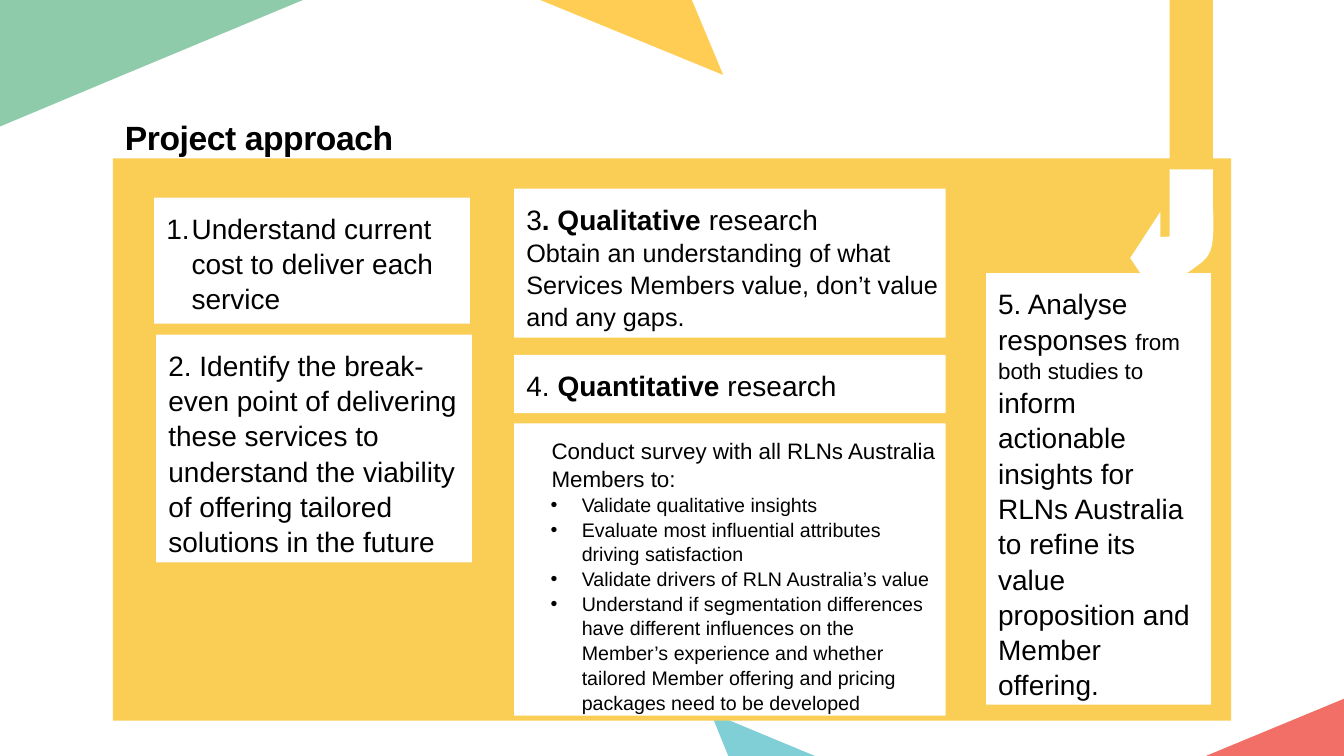
from dataclasses import dataclass
from typing import Optional

from lxml import etree
from pptx import Presentation
from pptx.dml.color import RGBColor
from pptx.enum import shapes, text
from pptx.oxml import ns
from pptx.util import Inches, Pt

YELLOW, WHITE, BLACK = "FACD54", "FFFFFF", "000000"
FONT = "Arial"
Point = tuple[float, float]


@dataclass
class Span:
    words: str
    size: float = 20
    bold: bool = False


@dataclass
class Para:
    spans: list[Span]
    margin: float = 0
    indent: float = 0
    bullet: Optional[str] = None
    level: int = 0


@dataclass
class Card:
    left: float
    top: float
    width: float
    height: float
    paras: list[Para]


@dataclass
class Corner:
    points: list[Point]
    edge: list[Point]
    color: str
    edge_width: float


def rgb(color: str) -> RGBColor:
    return RGBColor.from_string(color)


def draw_path(page, points: list[Point], closed: bool = True):
    emu = [(Inches(x), Inches(y)) for x, y in points]
    builder = page.shapes.build_freeform(*emu[0])
    builder.add_line_segments(emu[1:], close=closed)
    shape = builder.convert_to_shape()
    shape.shadow.inherit = False
    return shape


def fill_plain(shape, color: str) -> None:
    shape.shadow.inherit = False
    shape.fill.solid()
    shape.fill.fore_color.rgb = rgb(color)
    shape.line.fill.background()


def draw_corner(page, corner: Corner) -> None:
    fill_plain(draw_path(page, corner.points), corner.color)
    edge = draw_path(page, corner.edge, closed=False)
    edge.fill.background()
    edge.line.color.rgb = rgb(WHITE)
    edge.line.width = Pt(corner.edge_width)


def draw_box(page, left: float, top: float, width: float, height: float, color: str):
    box = page.shapes.add_shape(
        shapes.MSO_SHAPE.RECTANGLE, Inches(left), Inches(top), Inches(width), Inches(height))
    fill_plain(box, color)
    return box


def set_margins(frame, left: float, top: float, right: float, bottom: float) -> None:
    frame.word_wrap = True
    frame.vertical_anchor = text.MSO_ANCHOR.TOP
    frame.margin_left, frame.margin_top = Inches(left), Inches(top)
    frame.margin_right, frame.margin_bottom = Inches(right), Inches(bottom)


def format_run(run, span: Span) -> None:
    run.font.name = FONT
    run.font.size = Pt(span.size)
    run.font.bold = span.bold
    run.font.color.rgb = rgb(BLACK)


def set_bullet(paragraph, para: Para) -> None:
    props = paragraph._p.get_or_add_pPr()
    props.set("marL", str(Inches(para.margin)))
    props.set("indent", str(Inches(para.indent)))
    if para.bullet == "•":
        font = etree.SubElement(props, ns.qn("a:buFont"))
        font.set("typeface", FONT)
        etree.SubElement(props, ns.qn("a:buChar")).set("char", para.bullet)
    elif para.bullet:
        etree.SubElement(props, ns.qn("a:buAutoNum")).set("type", para.bullet)


def draw_card(page, card: Card) -> None:
    box = draw_box(page, card.left, card.top, card.width, card.height, WHITE)
    frame = box.text_frame
    set_margins(frame, 0.12, 0.12, 0.05, 0.12)
    for index, para in enumerate(card.paras):
        paragraph = frame.add_paragraph() if index else frame.paragraphs[0]
        paragraph.alignment = text.PP_ALIGN.LEFT
        paragraph.line_spacing = 1.05
        paragraph.level = para.level
        set_bullet(paragraph, para)
        for span in para.spans:
            run = paragraph.add_run()
            run.text = span.words
            format_run(run, span)


def draw_title(page, words: str) -> None:
    box = page.shapes.add_textbox(Inches(1.23), Inches(1.14), Inches(11.94), Inches(0.41))
    set_margins(box.text_frame, 0.01, 0.02, 0, 0)
    box.text_frame.text = words
    run = box.text_frame.paragraphs[0].runs[0]
    format_run(run, Span(words, 24, True))
    run._r.get_or_add_rPr().set("spc", "-30")


def bezier(points: list[Point], steps: int = 8) -> list[Point]:
    curve = []
    for step in range(1, steps + 1):
        t = step / steps
        weights = ((1 - t) ** 3, 3 * t * (1 - t) ** 2, 3 * t * t * (1 - t), t ** 3)
        curve.append((sum(w * x for w, (x, _) in zip(weights, points)),
                      sum(w * y for w, (_, y) in zip(weights, points))))
    return curve


def draw_arrow(page) -> None:
    knots = [
        (11.51, 2.77), (11.62, 2.77), (11.74, 2.74), (11.83, 2.67),
        (11.92, 2.6), (12.02, 2.56), (12.03, 2.36),
        (12.05, 2.16), (12.02, 1.78), (11.95, 1.62),
        (11.88, 1.47), (11.75, 1.35), (11.63, 1.35),
        (11.72, 1.37), (11.81, 1.45), (11.86, 1.57),
        (11.91, 1.69), (11.93, 1.83), (11.9, 1.97),
        (11.88, 2.1), (11.82, 2.21), (11.75, 2.28),
        (11.67, 2.35), (11.59, 2.35), (11.51, 2.35)]
    outline = [knots[0]]
    for start in range(0, len(knots) - 1, 3):
        outline += bezier(knots[start:start + 4])
    outline += [(11.51, 2.1), (11.21, 2.56), (11.51, 3.01)]
    fill_plain(draw_path(page, outline), WHITE)
    draw_box(page, 11.6, 1.67, 0.43, 0.69, WHITE)
    draw_box(page, 11.6, -0.01, 0.43, 1.69, YELLOW)


CORNERS = [
    Corner([(3.28, -0.04), (0, -0.04), (0, 1.33)],
           [(0, 1.33), (1.05, 0.89), (3.28, -0.04)], "8DCBAA", 9.69),
    Corner([(6.92, -0.04), (5.08, -0.04), (7.3, 0.87)],
           [(5.08, -0.04), (7.3, 0.87), (6.92, -0.04)], "FFCD54", 9.69),
    Corner([(6.9, 6.92), (7.16, 7.56), (8.44, 7.56)],
           [(8.44, 7.56), (6.9, 6.92), (7.16, 7.56)], "81CFD6", 11.54),
    Corner([(13.34, 6.84), (11.65, 7.54), (13.34, 7.54)],
           [(13.34, 6.84), (11.65, 7.54)], "F26F67", 11.54),
]
SURVEY_GOALS = [
    "Validate qualitative insights",
    "Evaluate most influential attributes driving satisfaction",
    "Validate drivers of RLN Australia’s value",
    "Understand if segmentation differences have different influences on the Member’s experience "
    "and whether tailored Member offering and pricing packages need to be developed",
]
CARDS = [
    Card(1.53, 1.96, 3.13, 1.25, [Para(
        [Span("Understand current cost to deliver each service")], 0.25, -0.25, "arabicPeriod")]),
    Card(1.55, 3.32, 3.13, 2.26, [Para([Span(
        "2. Identify the break-even point of delivering these services to understand "
        "the viability of offering tailored solutions in the future")])]),
    Card(5.1, 1.87, 4.28, 1.48, [
        Para([Span("3"), Span(". Qualitative ", bold=True), Span("research")]),
        Para([Span("Obtain an understanding of what Services Members value, "
                   "don’t value and any gaps.", 18)])]),
    Card(5.1, 3.52, 4.28, 0.58, [
        Para([Span("4. "), Span("Quantitative ", bold=True), Span("research")])]),
    Card(9.78, 2.71, 2.23, 4.28, [Para([
        Span("5. Analyse responses "), Span("from both studies to ", 16),
        Span("inform actionable insights for RLNs Australia to refine its "
             "value proposition and Member offering.")])]),
    Card(5.1, 4.2, 4.28, 2.9, [
        Para([Span("Conduct survey with all RLNs Australia Members to:", 16)], 0.25),
        *(Para([Span(goal, 14)], 0.55, -0.31, "•", 1) for goal in SURVEY_GOALS)]),
]


def main() -> None:
    deck = Presentation()
    deck.slide_width, deck.slide_height = Inches(13.33), Inches(7.5)
    page = deck.slides.add_slide(deck.slide_layouts[6])
    for corner in CORNERS:
        draw_corner(page, corner)
    draw_box(page, 1.12, 1.57, 11.09, 5.58, YELLOW)
    draw_title(page, "Project approach")
    draw_arrow(page)
    for card in CARDS:
        draw_card(page, card)
    deck.save("out.pptx")


if __name__ == "__main__":
    main()
